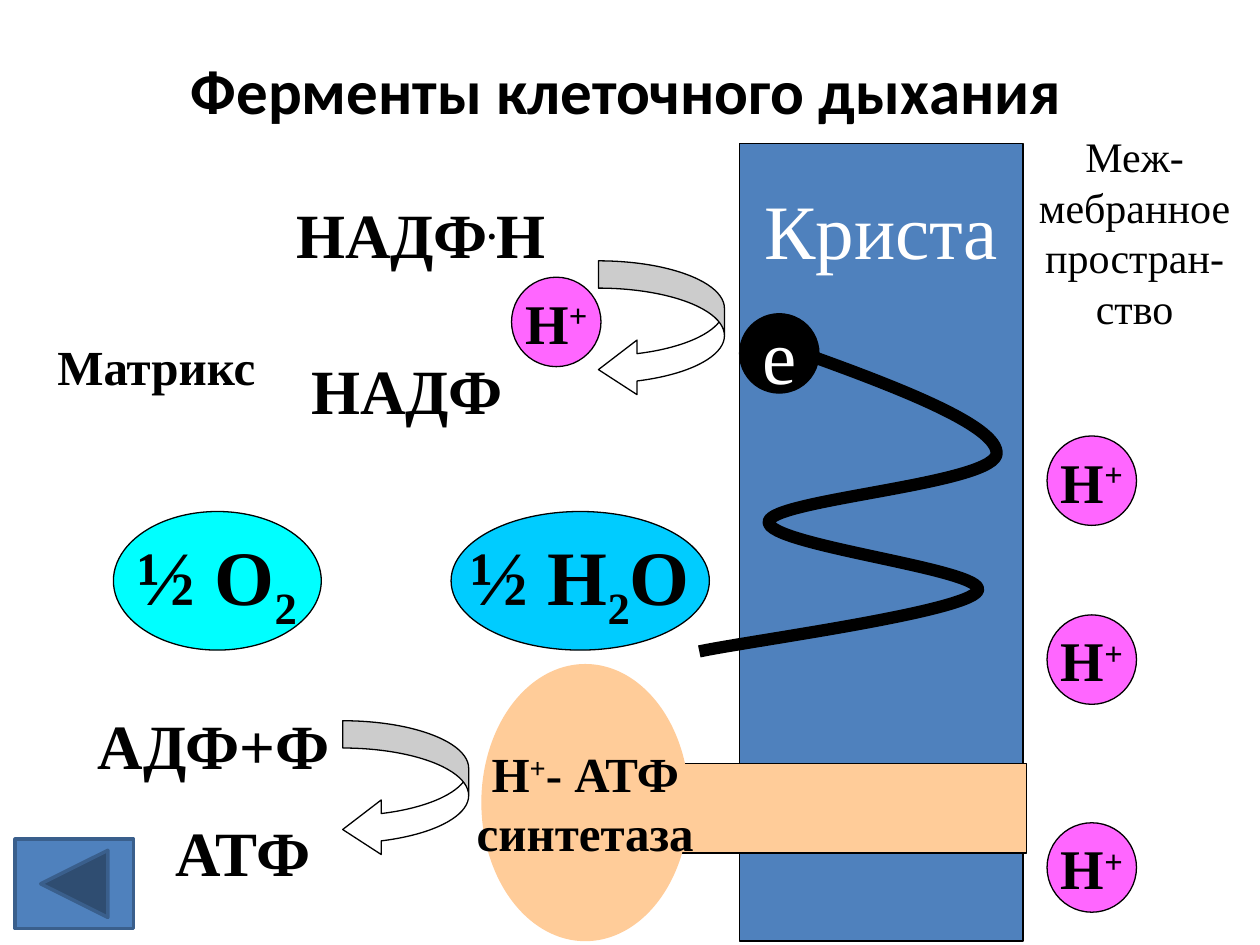
from pptx import Presentation
from pptx.dml.color import RGBColor
from pptx.enum.shapes import MSO_SHAPE
from pptx.enum.text import MSO_ANCHOR, PP_ALIGN
from pptx.oxml.ns import qn
from pptx.util import Inches, Pt
from lxml import etree

RECT, OVAL = MSO_SHAPE.RECTANGLE, MSO_SHAPE.OVAL
ARROW = MSO_SHAPE.CURVED_LEFT_ARROW
BACK = MSO_SHAPE.ACTION_BUTTON_BACK_OR_PREVIOUS
TOP, MIDDLE = MSO_ANCHOR.TOP, MSO_ANCHOR.MIDDLE
CENTER = PP_ALIGN.CENTER

COLORS = {
    "black": "000000", "white": "FFFFFF", "blue": "4F81BD", "navy": "3A5F8C",
    "peach": "FFCC99", "pink": "FF66FF", "cyan": "00FFFF", "sky": "00CCFF",
}
SERIF = "Times New Roman"
FORMATS = {
    "title": {"name": "Calibri", "size": Pt(36), "bold": True},
    "big": {"name": SERIF, "size": Pt(44), "bold": False},
    "gas": {"name": SERIF, "size": Pt(44), "bold": True},
    "mol": {"name": SERIF, "size": Pt(36), "bold": True},
    "ion": {"name": SERIF, "size": Pt(32), "bold": True},
    "label": {"name": SERIF, "size": Pt(28), "bold": True},
    "note": {"name": SERIF, "size": Pt(24), "bold": False},
}
SUP, SUB = 30, -25  # baseline shift in percent
PROTON = [["Н", ("+", SUP)]]


def color(name):
    return RGBColor.from_string(COLORS[name])


def write(shape, lines, style, ink="black", wrap=False, anchor=MIDDLE):
    """Each line is a list of strings or (string, baseline) pairs."""
    frame = shape.text_frame
    frame.word_wrap = wrap
    frame.vertical_anchor = anchor
    for i, line in enumerate(lines):
        para = frame.paragraphs[0] if i == 0 else frame.add_paragraph()
        para.alignment = CENTER
        for part in line:
            text, base = part if isinstance(part, tuple) else (part, 0)
            run = para.add_run()
            run.text = text
            for key, value in FORMATS[style].items():
                setattr(run.font, key, value)
            run.font.color.rgb = color(ink)
            if base:
                run._r.get_or_add_rPr().set("baseline", str(base * 1000))


def add_shape(shapes, kind, box, fill, line="black", width=0.75):
    shape = shapes.add_shape(kind, *map(Inches, box))
    shape.shadow.inherit = False
    shape.fill.solid()
    shape.fill.fore_color.rgb = color(fill)
    if line:
        shape.line.color.rgb = color(line)
        shape.line.width = Pt(width)
    else:
        shape.line.fill.background()
    return shape


def add_text(shapes, box, line, style, wrap=False):
    write(shapes.add_textbox(*map(Inches, box)), [line], style, wrap=wrap, anchor=TOP)


def add_proton(shapes, x, y):
    write(add_shape(shapes, OVAL, (x, y, 0.71, 0.71), "pink"), PROTON, "ion")


def add_turn(shapes, x, y):
    arrow = add_shape(shapes, ARROW, (x, y, 1, 1.08), "white")
    for i, value in enumerate((0.217, 0.433, 0.306)):
        arrow.adjustments[i] = value


def add_curve(shapes, points, width):
    """Draw a Bezier chain: a start point, then three points per arc."""
    spots = [(Inches(x), Inches(y)) for x, y in points]
    pen = shapes.build_freeform(*spots[0])
    pen.add_line_segments(spots[1:], close=False)
    curve = pen.convert_to_shape()
    curve.shadow.inherit = False
    curve.fill.background()
    curve.line.color.rgb = color("black")
    curve.line.width = Pt(width)
    # Turn every three straight segments into one cubic arc
    legs = list(curve._element.iter(qn("a:lnTo")))
    for i in range(0, len(legs), 3):
        arc = etree.Element(qn("a:cubicBezTo"))
        legs[i].addprevious(arc)
        for leg in legs[i:i + 3]:
            arc.append(leg[0])
            leg.getparent().remove(leg)


def main():
    prs = Presentation()
    prs.slide_width, prs.slide_height = Inches(10), Inches(7.5)
    shapes = prs.slides.add_slide(prs.slide_layouts[6]).shapes

    # Crista and the spaces on both sides
    crista = add_shape(shapes, RECT, (5.87, 1.14, 2.25, 6.33), "blue")
    write(crista, [["Криста"]], "big", "white", anchor=TOP)
    crista.text_frame.margin_top = Inches(0.31)
    add_text(shapes, (0.34, 2.62, 1.9, 0.57), ["Матрикс "], "label", wrap=True)
    add_text(shapes, (8.04, 0.99, 1.93, 1.72),
             ["Меж-мебранное простран-ство"], "note", wrap=True)

    # ATP synthase
    group = shapes.add_group_shape().shapes
    add_shape(group, RECT, (5.24, 6.06, 2.91, 0.71), "peach")
    head = add_shape(group, OVAL, (3.82, 5.27, 1.65, 2.2), "peach", line=None)
    write(head, [["Н", ("+", SUP), "- АТФ"], ["синтетаза"]], "label")

    # Protons
    for x, y in ((8.31, 4.88), (8.31, 3.46), (4.06, 2.2), (8.31, 6.53)):
        add_proton(shapes, x, y)

    # Reactions in the matrix
    for x, y in ((4.75, 2.07), (2.72, 5.72)):
        add_turn(shapes, x, y)
    for box, line in (
        ((2.24, 1.5, 2.2, 0.7), ["НАДФ", (".", SUP), "Н"]),
        ((2.37, 2.74, 1.72, 0.7), ["НАДФ"]),
        ((0.67, 5.56, 2.05, 0.7), ["АДФ+Ф"]),
        ((1.27, 6.41, 1.32, 0.7), ["АТФ"]),
    ):
        add_text(shapes, box, line, "mol")

    # Path of the electron
    add_curve(shapes, [
        (5.94, 2.65),
        (6.91, 2.99), (7.89, 3.34), (7.91, 3.59),
        (7.94, 3.84), (6.13, 3.96), (6.1, 4.14),
        (6.08, 4.33), (7.85, 4.52), (7.76, 4.69),
        (7.66, 4.86), (5.92, 5.09), (5.55, 5.17),
    ], 7)
    spot = add_shape(shapes, OVAL, (5.87, 2.49, 0.63, 0.63), "black")
    write(spot, [["е"]], "big", "white")

    # Oxygen and water
    for x, width, fill, line in (
        (0.9, 1.65, "cyan", ["½ О", ("2", SUB)]),
        (3.58, 2.05, "sky", ["½ Н", ("2", SUB), "О"]),
    ):
        write(add_shape(shapes, OVAL, (x, 4.06, width, 1.1), fill), [line], "gas")

    # Title and back button
    add_text(shapes, (0.51, 0.36, 8.92, 0.62),
             ["Ферменты клеточного дыхания"], "title", wrap=True)
    add_shape(shapes, BACK, (0.12, 6.66, 0.94, 0.71), "blue", "navy", 2)

    prs.save("out.pptx")


if __name__ == "__main__":
    main()
